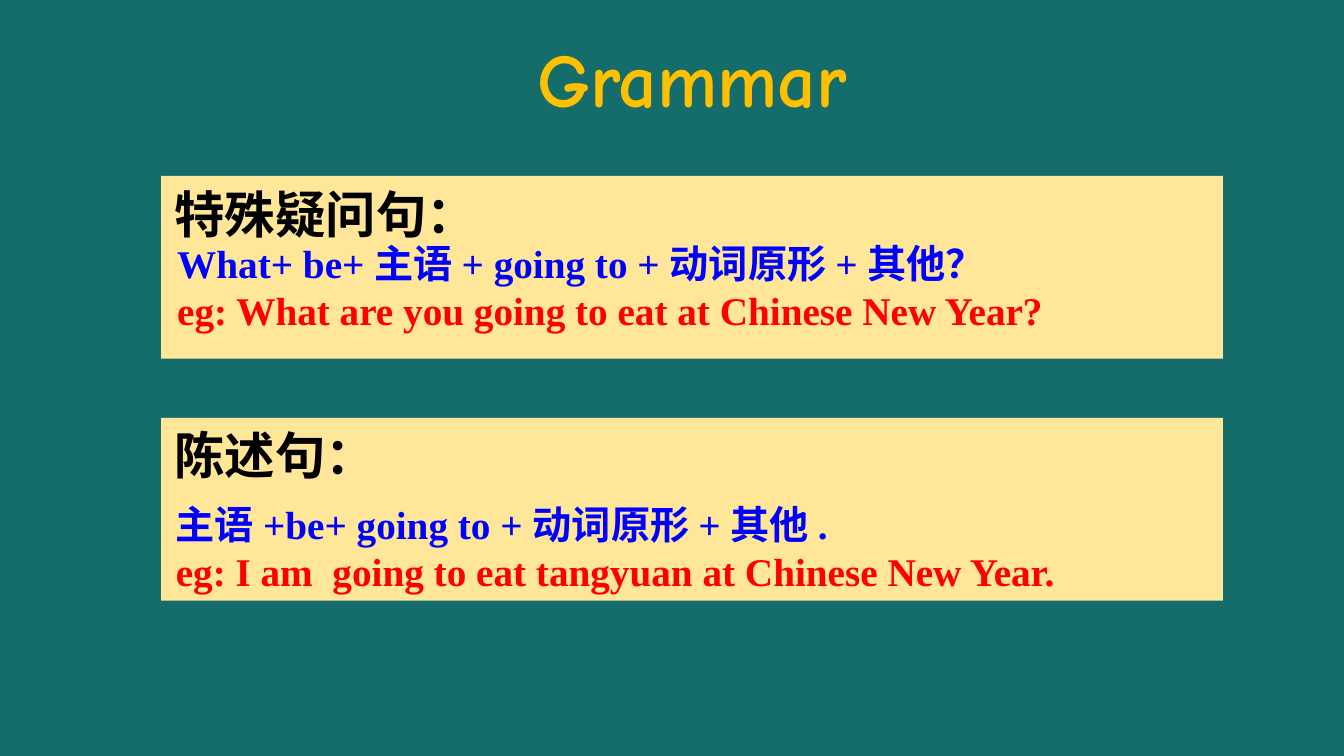
from pptx import Presentation
from pptx.dml.color import RGBColor
from pptx.enum.shapes import MSO_SHAPE
from pptx.enum.text import MSO_ANCHOR, MSO_AUTO_SIZE, PP_ALIGN
from pptx.util import Inches, Pt

TEAL = RGBColor(0x15, 0x6D, 0x6B)
CREAM = RGBColor(0xFF, 0xE6, 0x99)
GOLD = RGBColor(0xFF, 0xC0, 0x00)
BLACK = RGBColor(0x00, 0x00, 0x00)
BLUE = RGBColor(0x00, 0x00, 0xFF)
RED = RGBColor(0xFF, 0x00, 0x00)

# heading, panel top, text box (left, top, width), pattern, example
RULES = [
    ("特殊疑问句：", 1.31, (1.22, 1.73, 7.31),
     "What+ be+ 主语 + going to + 动词原形 + 其他？",
     "eg: What are you going to eat at Chinese New Year?"),
    ("陈述句：", 3.11, (1.21, 3.67, 7.03),
     "主语 +be+ going to + 动词原形 + 其他 .",
     "eg: I am  going to eat tangyuan at Chinese New Year."),
]


def write(p, text, font, size, color):
    p.text = text
    f = p.runs[0].font
    f.name, f.size, f.bold = font, Pt(size), True
    f.color.rgb = color


prs = Presentation()
prs.slide_width = Inches(10)
prs.slide_height = Inches(10) * 9 // 16
s = prs.slides.add_slide(prs.slide_layouts[5])
s.background.fill.solid()
s.background.fill.fore_color.rgb = TEAL

title = s.shapes.title
title.left, title.top = Inches(3.43), Inches(0.19)
title.width, title.height = Inches(3.44), Inches(0.91)
tf = title.text_frame
tf.auto_size = MSO_AUTO_SIZE.NONE
tf.word_wrap = False
tf.vertical_anchor = MSO_ANCHOR.TOP
write(tf.paragraphs[0], "Grammar", "Comic Neue", 40.5, GOLD)
tf.paragraphs[0].alignment = PP_ALIGN.CENTER

for heading, panel_top, (left, top, width), pattern, example in RULES:
    panel = s.shapes.add_shape(MSO_SHAPE.RECTANGLE, Inches(1.2), Inches(panel_top),
                               Inches(7.9), Inches(1.36))
    panel.shadow.inherit = False
    panel.fill.solid()
    panel.fill.fore_color.rgb = CREAM
    panel.line.fill.background()
    tf = panel.text_frame
    tf.vertical_anchor = MSO_ANCHOR.TOP
    write(tf.paragraphs[0], heading, "Arial", 27, BLACK)
    tf.paragraphs[0].alignment = PP_ALIGN.LEFT

    box = s.shapes.add_textbox(Inches(left), Inches(top), Inches(width), Inches(0.81))
    tf = box.text_frame
    tf.word_wrap = True
    write(tf.paragraphs[0], pattern, "Times New Roman", 21, BLUE)
    write(tf.add_paragraph(), example, "Times New Roman", 21, RED)

prs.save("out.pptx")
